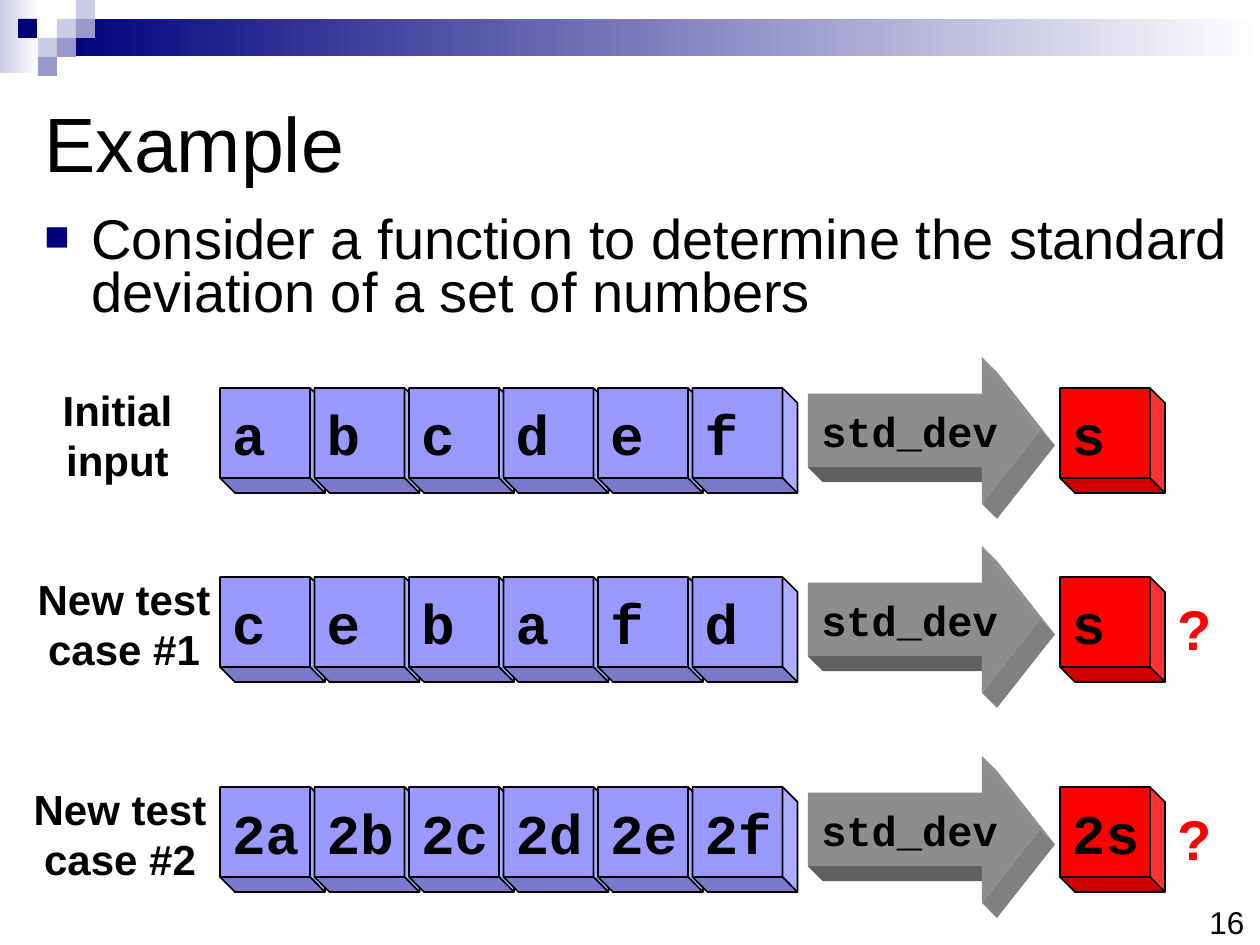
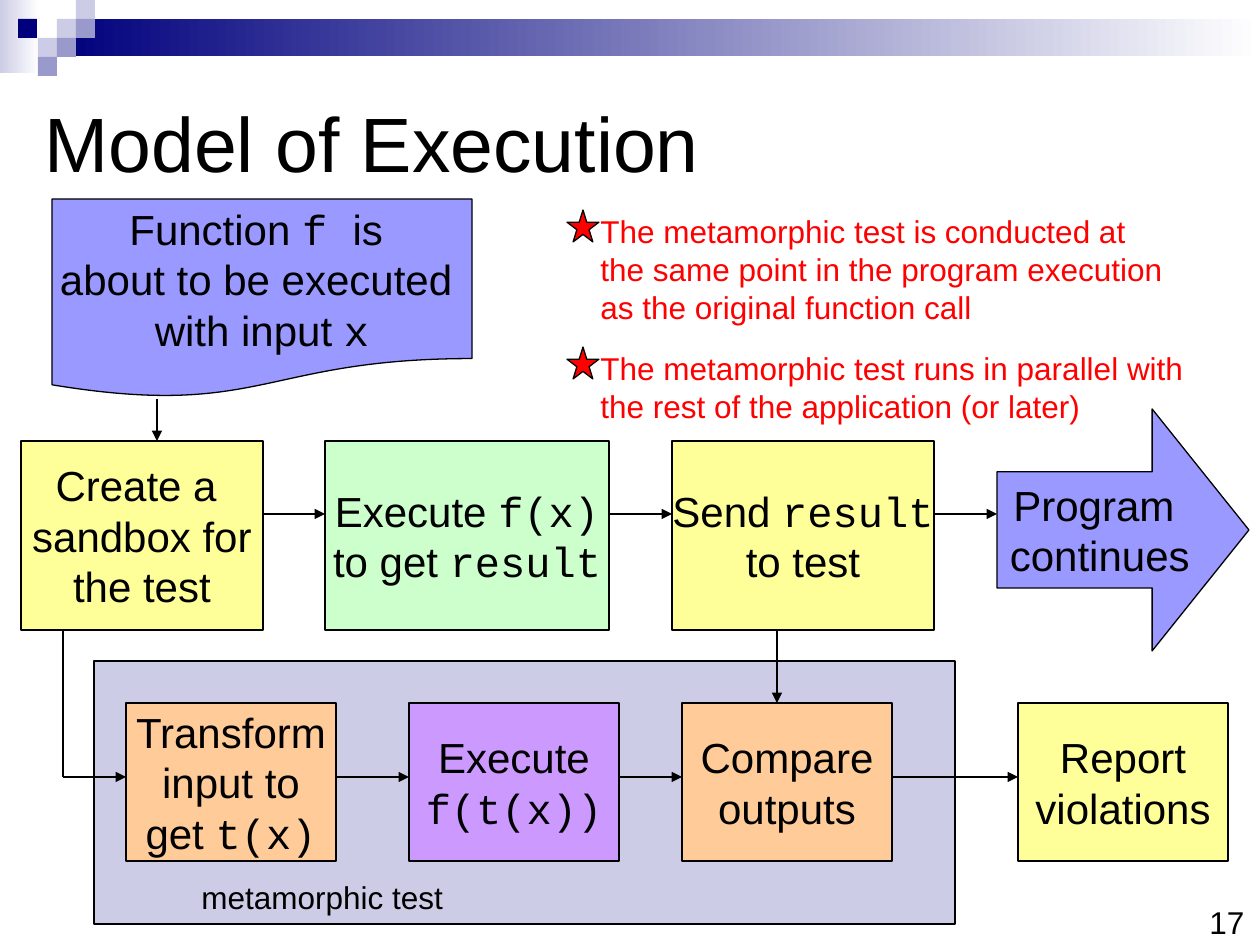
"""Build two slides on metamorphic testing: an example and the model of execution."""
from lxml import etree
from pptx import Presentation
from pptx.dml.color import RGBColor
from pptx.enum.shapes import MSO_CONNECTOR, MSO_SHAPE as SHAPE
from pptx.enum.text import MSO_ANCHOR as ANCHOR, PP_ALIGN as ALIGN
from pptx.oxml.ns import qn
from pptx.util import Emu, Pt

SANS, MONO = "Arial", "Courier New"
BLACK, RED, NAVY = "000000", "FF0000", "00007D"
LAVENDER, MIST, SLATE = "9999FF", "CCCCE6", "9999CC"
YELLOW, GREEN, ORANGE, PURPLE = "FFFF99", "CCFFCC", "FFCC99", "CC99FF"
ARROW_FRONT, ARROW_SIDE, ARROW_UNDER = "8D8D8D", "808080", "606060"

BANDS = [((0, 0, 39, 73), MIST), ((57, 19, 1203, 37), NAVY)]
SQUARES = [(57, 19, MIST), (76, 0, MIST), (76, 19, SLATE), (38, 38, MIST),
           (18, 19, NAVY), (57, 38, SLATE), (38, 57, SLATE)]
SQUARE = 19

POINT = "Consider a function to determine the standard deviation of a set of numbers"
CASES = [
    (388, (50, 135), ["Initial", "input"], "a b c d e f", "s", ""),
    (577, (25, 198), ["New test", "case #1"], "c e b a f d", "s", "?"),
    (787, (21, 198), ["New test", "case #2"], "2a 2b 2c 2d 2e 2f", "2s", "?"),
]
CUBE, CUBE_STEP, INPUT_X, OUTPUT_X, DEPTH = 105, 94.5, 220, 1060, 15
ARROW_X, ARROW_W, ARROW_H, HEAD = 808, 232, 147, 58

STEPS = [
    (SHAPE.FLOWCHART_DOCUMENT, (52, 199, 420, 199), LAVENDER,
     ["Function `f `is ", "about to be executed ", "with input `x`"]),
    (SHAPE.RECTANGLE, (21, 441, 242, 189), YELLOW, ["Create a ", "sandbox for", "the test"]),
    (SHAPE.RECTANGLE, (325, 441, 284, 189), GREEN, ["Execute `f(x)`", "to get `result`"]),
    (SHAPE.RECTANGLE, (672, 441, 262, 189), YELLOW, ["Send `result`", "to test"]),
    (SHAPE.RIGHT_ARROW, (997, 409, 252, 242), LAVENDER, ["Program ", "continues"]),
    (SHAPE.RECTANGLE, (126, 703, 210, 158), ORANGE,
     ["Transform", "input to", "get `t(x)`"]),
    (SHAPE.RECTANGLE, (409, 703, 210, 158), PURPLE, ["Execute", "`f(t(x))`"]),
    (SHAPE.RECTANGLE, (682, 703, 210, 158), ORANGE, ["Compare", "outputs"]),
    (SHAPE.RECTANGLE, (1018, 703, 210, 158), YELLOW, ["Report", "violations"]),
]
TOP_FLOW, TEST_FLOW = 514, 777
ARROWS = [(157, 399, 157, 441), (777, 630, 777, 703)]
ARROWS += [(x1, TOP_FLOW, x2, TOP_FLOW) for x1, x2 in [(263, 325), (609, 672), (934, 997)]]
ARROWS += [(x1, TEST_FLOW, x2, TEST_FLOW)
           for x1, x2 in [(63, 126), (336, 409), (619, 682), (892, 1018)]]
NOTES = [
    (210, 587, ["The metamorphic test is conducted at",
                "the same point in the program execution",
                "as the original function call"]),
    (347, 608, ["The metamorphic test runs in parallel with",
                "the rest of the application (or later)"]),
]


def px(n):
    return Emu(round(n * 914400 / 126))


def rgb(color):
    return RGBColor.from_string(color)


def write(shape, lines, size, color=BLACK, font=SANS, bold=False,
          align=ALIGN.LEFT, anchor=ANCHOR.TOP, wrap=False):
    tf = shape.text_frame
    tf.word_wrap = wrap
    tf.vertical_anchor = anchor
    for i, line in enumerate(lines):
        p = tf.add_paragraph() if i else tf.paragraphs[0]
        p.alignment = align
        for j, part in enumerate(line.split("`")):
            if part:
                r = p.add_run()
                r.text = part
                r.font.name = MONO if j % 2 else font
                r.font.size, r.font.bold = Pt(size), bold
                r.font.color.rgb = rgb(color)
    return tf


def add_text(s, box, lines, size, **style):
    return write(s.shapes.add_textbox(*map(px, box)), lines, size, **style)


def paint(shape, fill, line=None):
    shape.shadow.inherit = False
    shape.fill.solid()
    shape.fill.fore_color.rgb = rgb(fill)
    if line:
        shape.line.color.rgb = rgb(BLACK)
        shape.line.width = Pt(line)
    else:
        shape.line.fill.background()
    return shape


def add_shape(s, kind, box, fill, line=None):
    return paint(s.shapes.add_shape(kind, *map(px, box)), fill, line)


def add_polygon(s, points, fill):
    corners = [(px(x), px(y)) for x, y in points]
    builder = s.shapes.build_freeform(*corners[0], scale=1.0)
    builder.add_line_segments(corners[1:], close=True)
    paint(builder.convert_to_shape(), fill)


def add_line(s, ends, arrow=True):
    c = s.shapes.add_connector(MSO_CONNECTOR.STRAIGHT, *map(px, ends))
    c.line.color.rgb = rgb(BLACK)
    c.line.width = Pt(1)
    if arrow:
        etree.SubElement(c.line._get_or_add_ln(), qn("a:tailEnd"), type="triangle")
    etree.SubElement(c._element.spPr, qn("a:effectLst"))


def add_slide(prs, title, number):
    s = prs.slides.add_slide(prs.slide_layouts[6])
    for box, color in BANDS:
        fill = add_shape(s, SHAPE.RECTANGLE, box, color).fill
        fill.gradient()
        fill.gradient_angle = 0
        for stop, shade in zip(fill.gradient_stops, (color, "FFFFFF")):
            stop.color.rgb = rgb(shade)
    for x, y, color in SQUARES:
        add_shape(s, SHAPE.RECTANGLE, (x, y, SQUARE, SQUARE), color)
    add_text(s, (1197, 897, 64, 50), [str(number)], 18)
    add_text(s, (32, 63, 1228, 158), [title], 44, anchor=ANCHOR.MIDDLE, wrap=True)
    return s


def add_bullet(p):
    pPr = p._p.get_or_add_pPr()
    pPr.set("marL", str(px(47)))
    pPr.set("indent", str(-px(47)))
    color = etree.SubElement(pPr, qn("a:buClr"))
    etree.SubElement(color, qn("a:srgbClr"), val=NAVY)
    etree.SubElement(pPr, qn("a:buSzPct"), val="75000")
    etree.SubElement(pPr, qn("a:buFont"), typeface=SANS)
    etree.SubElement(pPr, qn("a:buChar"), char="■")


def add_cube(s, x, y, label, color):
    cube = add_shape(s, SHAPE.CUBE, (x, y, CUBE, CUBE), color, 1)
    cube.adjustments[0] = DEPTH / CUBE
    cube.rotation = 90
    tf = write(cube, [label], 32, font=MONO, bold=True, anchor=ANCHOR.MIDDLE)
    tf.margin_left = tf.margin_right = tf.margin_top = tf.margin_bottom = px(12)
    tf._txBody.bodyPr.set("vert", "vert270")


def add_function_arrow(s, y):
    neck, tip, mid = ARROW_X + ARROW_W - HEAD, ARROW_X + ARROW_W, y + ARROW_H / 2
    under, bottom = y + ARROW_H * 3 / 4, y + ARROW_H
    add_polygon(s, [(ARROW_X, under), (neck, under), (neck, under + DEPTH),
                    (ARROW_X + DEPTH, under + DEPTH)], ARROW_UNDER)
    for edge, color in [(y, ARROW_FRONT), (bottom, ARROW_SIDE)]:
        add_polygon(s, [(neck, edge), (neck + DEPTH, edge + DEPTH),
                        (tip + DEPTH, mid + DEPTH), (tip, mid)], color)
    arrow = add_shape(s, SHAPE.RIGHT_ARROW, (ARROW_X, y, ARROW_W, ARROW_H), ARROW_FRONT)
    arrow.adjustments[1] = HEAD / ARROW_H
    write(arrow, ["std_dev"], 24, font=MONO, bold=True,
          align=ALIGN.CENTER, anchor=ANCHOR.MIDDLE)


def build_example(prs):
    s = add_slide(prs, "Example", 16)
    tf = add_text(s, (32, 210, 1228, 126), [POINT], 32, wrap=True)
    tf.paragraphs[0].line_spacing = 0.8
    add_bullet(tf.paragraphs[0])
    for y, (label_x, label_w), label, inputs, output, mark in CASES:
        add_text(s, (label_x, y - 10, label_w, 113), label, 24, bold=True, align=ALIGN.CENTER)
        for i, value in enumerate(inputs.split()):
            add_cube(s, INPUT_X + i * CUBE_STEP, y, value, LAVENDER)
        add_function_arrow(s, y - 31)
        add_cube(s, OUTPUT_X, y, output, RED)
        if mark:
            add_text(s, (1165, y + 11, 59, 80), [mark], 32, color=RED, bold=True)


def build_model(prs):
    s = add_slide(prs, "Model of Execution", 17)
    add_shape(s, SHAPE.RECTANGLE, (94, 661, 861, 263), MIST, 0.75)
    add_text(s, (189, 872, 270, 50), ["metamorphic test"], 18)
    for kind, box, color, lines in STEPS:
        step = add_shape(s, kind, box, color, 0.75)
        if kind == SHAPE.RIGHT_ARROW:
            step.adjustments[0], step.adjustments[1] = 0.48, 0.4
        write(step, lines, 24, align=ALIGN.CENTER, anchor=ANCHOR.MIDDLE)
    for ends in ARROWS:
        add_line(s, ends)
    add_line(s, (63, 630, 63, TEST_FLOW), arrow=False)
    for y, width, lines in NOTES:
        add_text(s, (588, y - 4, width, 38 * len(lines) + 12), lines, 18, color=RED)
        add_shape(s, SHAPE.STAR_5_POINT, (567, y, 32, 32), RED, 0.75)


def main():
    prs = Presentation()
    prs.slide_width, prs.slide_height = px(1260), px(945)
    build_example(prs)
    build_model(prs)
    prs.save("out.pptx")


if __name__ == "__main__":
    main()
